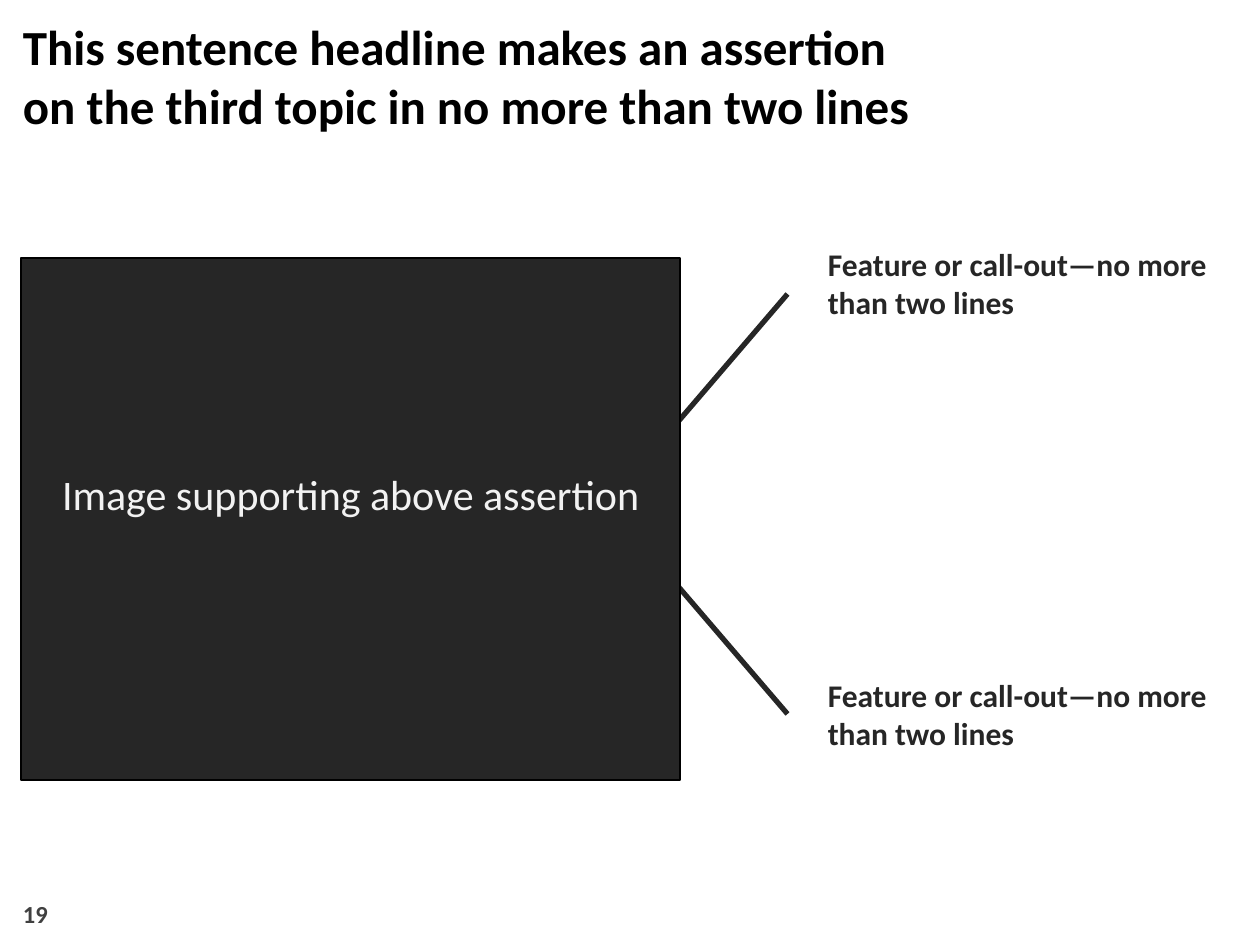
from lxml import etree
from pptx import Presentation
from pptx.dml.color import RGBColor
from pptx.enum.shapes import MSO_CONNECTOR, MSO_SHAPE
from pptx.enum.text import MSO_ANCHOR, PP_ALIGN
from pptx.oxml.ns import qn
from pptx.util import Inches, Pt

STRAIGHT = MSO_CONNECTOR.STRAIGHT
RECTANGLE = MSO_SHAPE.RECTANGLE
TOP, MIDDLE, BOTTOM = MSO_ANCHOR.TOP, MSO_ANCHOR.MIDDLE, MSO_ANCHOR.BOTTOM
LEFT, CENTER = PP_ALIGN.LEFT, PP_ALIGN.CENTER


def color(hex_value):
    return RGBColor.from_string(hex_value)


class AssertionSlide:
    FONT = "Calibri"
    DARK, BLACK, GRAY, PALE = "262626", "000000", "404040", "F2F2F2"
    COLUMNS, ROWS = 120, 90

    def __init__(self, deck):
        self.slide = deck.slides.add_slide(deck.slide_layouts[6])
        self.column = deck.slide_width / self.COLUMNS
        self.row = deck.slide_height / self.ROWS

    def place(self, left, top, width, height):
        return (round(left * self.column), round(top * self.row),
                round(width * self.column), round(height * self.row))

    def fill_text(self, shape, lines, size, ink, bold=True, anchor=TOP,
                  align=LEFT, insets=(0.1, 0.05, 0.1, 0.05)):
        frame = shape.text_frame
        frame.word_wrap = True
        frame.vertical_anchor = anchor
        (frame.margin_left, frame.margin_top,
         frame.margin_right, frame.margin_bottom) = map(Inches, insets)
        paragraph = frame.paragraphs[0]
        paragraph.alignment = align
        for index, line in enumerate(lines):
            if index:
                paragraph.add_line_break()
            run = paragraph.add_run()
            run.text = line
            run.font.name = self.FONT
            run.font.size = Pt(size)
            run.font.bold = bold
            run.font.color.rgb = color(ink)

    def text(self, area, lines, size, ink, **style):
        self.fill_text(self.slide.shapes.add_textbox(*self.place(*area)),
                       lines, size, ink, **style)

    def image_panel(self, area, label):
        panel = self.slide.shapes.add_shape(RECTANGLE, *self.place(*area))
        panel.shadow.inherit = False
        panel.fill.solid()
        panel.fill.fore_color.rgb = color(self.DARK)
        panel.line.color.rgb = color(self.BLACK)
        panel.line.width = Pt(1)
        self.fill_text(panel, [label], 24, self.PALE, bold=False,
                       anchor=MIDDLE, align=CENTER,
                       insets=(0.1, 0.05, 0.1, 0.45))

    def leader(self, start, end):
        points = self.place(*start, *end)
        connector = self.slide.shapes.add_connector(STRAIGHT, *points)
        connector.line.color.rgb = color(self.DARK)
        connector.line.width = Pt(3)
        etree.SubElement(connector._element.spPr, qn("a:effectLst"))

    def callout(self, top, label, start_row, end_row):
        self.leader((63, start_row), (75, end_row))
        self.text((78, top, 40, 8), [label], 18, self.DARK,
                  insets=(0.07, 0.03, 0.07, 0.03))


def main():
    deck = Presentation()
    deck.slide_width, deck.slide_height = Inches(10), Inches(7.5)
    page = AssertionSlide(deck)
    for top, start_row, end_row in ((23, 42, 28), (64, 54, 68)):
        page.callout(top, "Feature or call-out—no more than two lines",
                     start_row, end_row)
    page.image_panel((2, 24.6, 62.8, 49.7), "Image supporting above assertion")
    page.text((1, 1, 118, 12.4),
              ["This sentence headline makes an assertion ",
               "on the third topic in no more than two lines"],
              28, page.BLACK)
    page.text((1, 84.2, 28, 4.8), ["19"], 14, page.GRAY, anchor=BOTTOM)
    deck.save("out.pptx")


if __name__ == "__main__":
    main()
